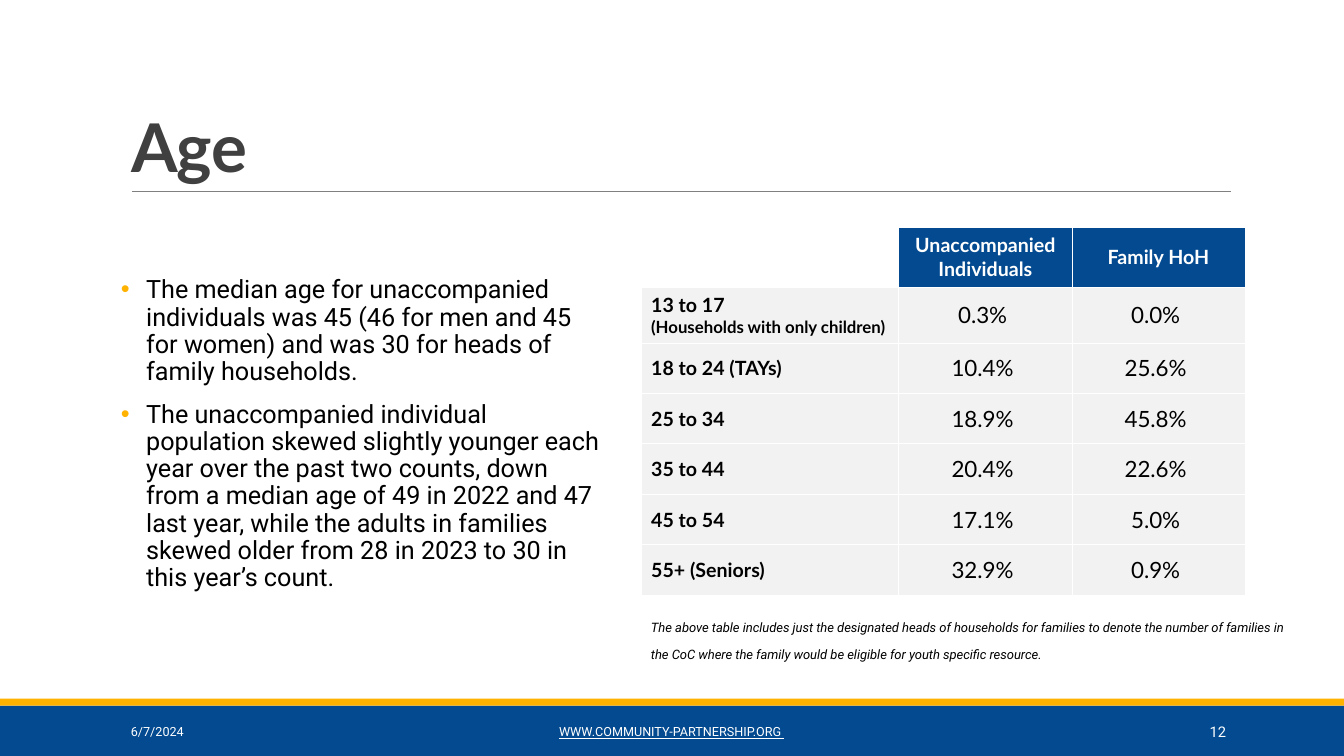
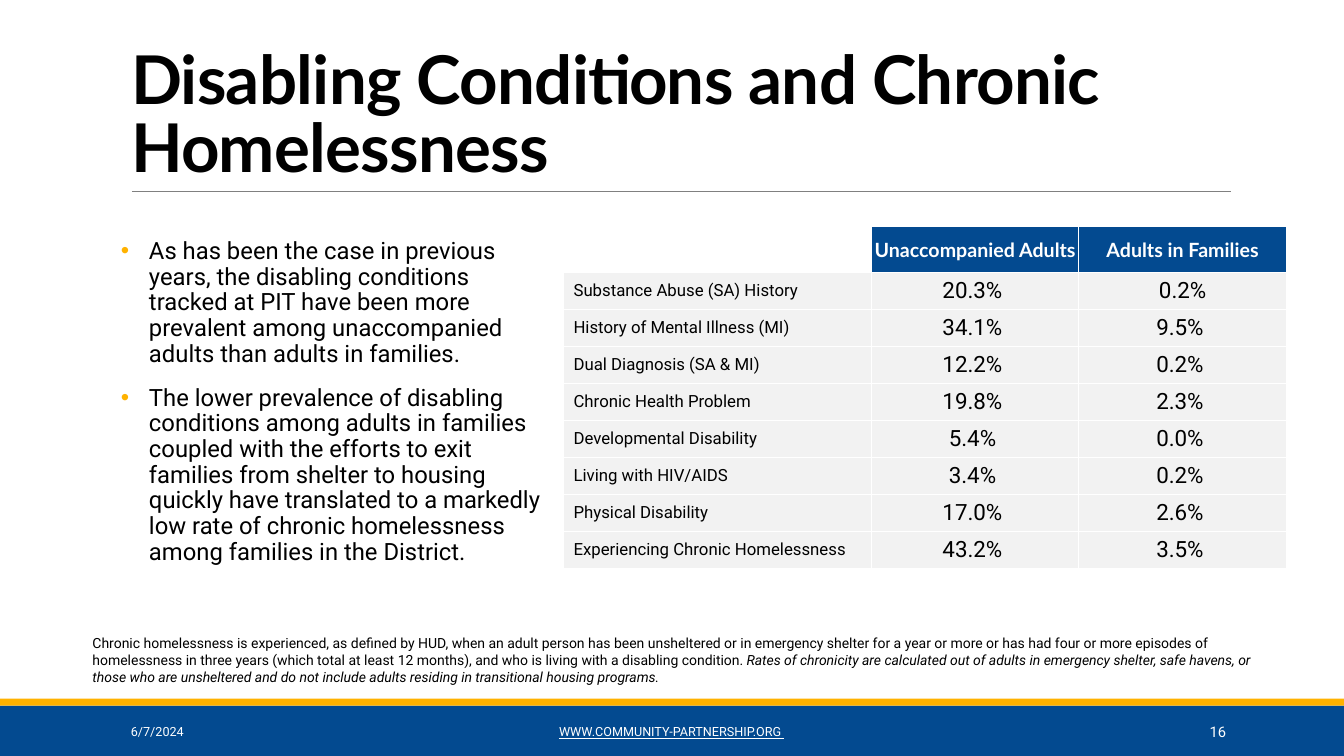
from lxml import etree
from pptx import Presentation
from pptx.dml.color import RGBColor
from pptx.enum.shapes import MSO_CONNECTOR, MSO_SHAPE
from pptx.enum.text import MSO_ANCHOR, MSO_AUTO_SIZE, PP_ALIGN
from pptx.oxml import parse_xml
from pptx.oxml.ns import qn
from pptx.util import Pt

RECTANGLE = MSO_SHAPE.RECTANGLE
STRAIGHT = MSO_CONNECTOR.STRAIGHT
TOP, MIDDLE, BOTTOM = MSO_ANCHOR.TOP, MSO_ANCHOR.MIDDLE, MSO_ANCHOR.BOTTOM
LEFT, CENTER, RIGHT = PP_ALIGN.LEFT, PP_ALIGN.CENTER, PP_ALIGN.RIGHT

BLUE = RGBColor(0x03, 0x4A, 0x90)
GOLD = RGBColor(0xFF, 0xB2, 0x00)
GRAY = RGBColor(0x80, 0x80, 0x80)
DARK_GRAY = RGBColor(0x40, 0x40, 0x40)
LIGHT_GRAY = RGBColor(0xF2, 0xF2, 0xF2)
BLACK = RGBColor(0, 0, 0)
WHITE = RGBColor(0xFF, 0xFF, 0xFF)

HEADING_FONT, BODY_FONT = "Lato", "Roboto"
SLIDE_WIDTH, SLIDE_HEIGHT = 960, 540
TITLE_ONLY = 5
NAMESPACE = "http://schemas.openxmlformats.org/drawingml/2006/main"


def add_run(paragraph, text, size, font=BODY_FONT, color=BLACK,
            bold=False, italic=False, underline=False):
    run = paragraph.add_run()
    run.text = text
    run.font.size = Pt(size)
    run.font.name = font
    run.font.color.rgb = color
    run.font.bold = bold
    run.font.italic = italic
    run.font.underline = underline
    return run


def add_bullet(paragraph, indent):
    """Give the paragraph a gold bullet with a hanging indent."""
    properties = paragraph._p.get_or_add_pPr()
    properties.set("marL", str(Pt(indent)))
    properties.set("indent", str(-Pt(indent)))
    color = etree.SubElement(properties, qn("a:buClr"))
    etree.SubElement(color, qn("a:srgbClr"), val=str(GOLD))
    etree.SubElement(properties, qn("a:buFont"), typeface="Arial")
    etree.SubElement(properties, qn("a:buChar"), char="•")


def set_borders(cell, color=WHITE, width=0.75):
    properties = cell._tc.get_or_add_tcPr()
    for side in ("lnL", "lnR", "lnT", "lnB"):
        properties.append(parse_xml(
            f'<a:{side} xmlns:a="{NAMESPACE}" w="{Pt(width)}"><a:solidFill>'
            f'<a:srgbClr val="{color}"/></a:solidFill></a:{side}>'))


def set_margins(target, horizontal, vertical):
    target.margin_left = target.margin_right = Pt(horizontal)
    target.margin_top = target.margin_bottom = Pt(vertical)


class Deck:
    """Holds the shared style and the slide being filled."""

    def __init__(self):
        self.presentation = Presentation()
        self.presentation.slide_width = Pt(SLIDE_WIDTH)
        self.presentation.slide_height = Pt(SLIDE_HEIGHT)
        self.slide = None

    def add_slide(self, title, number, title_color):
        layout = self.presentation.slide_layouts[TITLE_ONLY]
        self.slide = self.presentation.slides.add_slide(layout)
        self.add_band(504, 36, BLUE)
        self.add_band(499, 5, GOLD)
        self.add_rule(94.3, 879, 136.8)
        self.set_title(title, title_color)
        self.add_footer(86.4, 194.4, LEFT, "6/7/2024")
        self.add_footer(290, 379.4, CENTER, "WWW.COMMUNITY-PARTNERSHIP.ORG ",
                        underline=True)
        self.add_footer(780, 102.8, RIGHT, str(number), size=10.5)

    def add_band(self, top, height, color):
        band = self.slide.shapes.add_shape(
            RECTANGLE, 0, Pt(top), Pt(SLIDE_WIDTH), Pt(height))
        band.shadow.inherit = False
        band.fill.solid()
        band.fill.fore_color.rgb = color
        band.line.fill.background()

    def add_rule(self, left, right, top):
        rule = self.slide.shapes.add_connector(
            STRAIGHT, Pt(left), Pt(top), Pt(right), Pt(top))
        rule.line.color.rgb = GRAY
        rule.line.width = Pt(0.5)
        etree.SubElement(rule._element.spPr, qn("a:effectLst"))

    def set_title(self, text, color):
        title = self.slide.shapes.title
        title.left, title.top = Pt(86.4), Pt(22.3)
        title.width, title.height = Pt(792), Pt(114.5)
        frame = title.text_frame
        frame.auto_size = MSO_AUTO_SIZE.NONE
        frame.word_wrap = True
        frame.vertical_anchor = BOTTOM
        paragraph = frame.paragraphs[0]
        paragraph.alignment = LEFT
        paragraph.line_spacing = 0.85
        run = add_run(paragraph, text, 48, HEADING_FONT, color, bold=True)
        run._r.get_or_add_rPr().set("spc", "-50")

    def add_text_frame(self, left, top, width, height, anchor=TOP):
        box = self.slide.shapes.add_textbox(
            Pt(left), Pt(top), Pt(width), Pt(height))
        box.text_frame.word_wrap = True
        box.text_frame.vertical_anchor = anchor
        return box.text_frame

    def add_footer(self, left, width, alignment, text, size=9, underline=False):
        frame = self.add_text_frame(left, 508.3, width, 28.8, MIDDLE)
        paragraph = frame.paragraphs[0]
        paragraph.alignment = alignment
        add_run(paragraph, text, size, color=WHITE, underline=underline)

    def add_bullets(self, left, top, width, height, texts, size, indent,
                    margins, space_after=0):
        frame = self.add_text_frame(left, top, width, height)
        set_margins(frame, *margins)
        for index, text in enumerate(texts):
            paragraph = frame.add_paragraph() if index else frame.paragraphs[0]
            add_bullet(paragraph, indent)
            paragraph.line_spacing = 0.9
            paragraph.space_before = Pt(11 if index else 0)
            paragraph.space_after = Pt(space_after)
            add_run(paragraph, text, size)

    def add_note(self, left, top, width, height, parts, size, superscript=False):
        """Write (text, italic) parts as one paragraph."""
        frame = self.add_text_frame(left, top, width, height)
        for text, italic in parts:
            run = add_run(frame.paragraphs[0], text, size, italic=italic)
            if superscript:
                run._r.get_or_add_rPr().set("baseline", "30000")

    def add_data_table(self, left, top, widths, heights, headers, rows,
                       font, label_size, bold_labels, value_margin):
        """Rows hold a label, which may have a smaller second line, and values."""
        table = self.slide.shapes.add_table(
            len(heights), len(widths), Pt(left), Pt(top),
            Pt(sum(widths)), Pt(sum(heights))).table
        table.first_row = table.horz_banding = False
        for column, width in zip(table.columns, widths):
            column.width = Pt(width)
        for row, height in zip(table.rows, heights):
            row.height = Pt(height)

        self.fill_cell(table.cell(0, 0), WHITE)
        for column, header in enumerate(headers, 1):
            cell = table.cell(0, column)
            self.fill_cell(cell, BLUE, (0, 0))
            paragraph = cell.text_frame.paragraphs[0]
            paragraph.alignment = CENTER
            add_run(paragraph, header, 14, HEADING_FONT, WHITE, bold=True)

        for row, (label, *values) in enumerate(rows, 1):
            cell = table.cell(row, 0)
            self.fill_cell(cell, LIGHT_GRAY)
            frame = cell.text_frame
            for index, line in enumerate(label.split("\n")):
                paragraph = frame.add_paragraph() if index else frame.paragraphs[0]
                add_run(paragraph, line, 12 if index else label_size, font,
                        bold=bold_labels)
            for column, value in enumerate(values, 1):
                cell = table.cell(row, column)
                self.fill_cell(cell, LIGHT_GRAY, (value_margin, 3.6))
                paragraph = cell.text_frame.paragraphs[0]
                paragraph.alignment = CENTER
                add_run(paragraph, value, 16, font)

    def fill_cell(self, cell, color, margins=(7.2, 3.6)):
        set_borders(cell)
        cell.fill.solid()
        cell.fill.fore_color.rgb = color
        cell.vertical_anchor = MIDDLE
        set_margins(cell, *margins)


def add_age_slide(deck):
    deck.add_slide("Age", 12, DARK_GRAY)
    deck.add_bullets(78.5, 193.7, 360.7, 249.8, [
        "The median age for unaccompanied individuals was 45 (46 for men and 45 "
        "for women) and was 30 for heads of family households.",
        "The unaccompanied individual population skewed slightly younger each "
        "year over the past two counts, down from a median age of 49 in 2022 "
        "and 47 last year, while the adults in families skewed older from 28 in "
        "2023 to 30 in this year’s count.",
    ], size=18, indent=18, margins=(7.9, 4.3))
    deck.add_data_table(
        457.9, 162.3, [184.2, 123.6, 123.6], [42.8, 40] + [36] * 5,
        ["Unaccompanied Individuals", "Family HoH"], [
            ("13 to 17\n(Households with only children)", "0.3% ", "0.0% "),
            ("18 to 24 (TAYs)", "10.4% ", "25.6% "),
            ("25 to 34", "18.9% ", "45.8% "),
            ("35 to 44", "20.4% ", "22.6% "),
            ("45 to 54", "17.1% ", "5.0% "),
            ("55+ (Seniors)", "32.9% ", "0.9% "),
        ], font=HEADING_FONT, label_size=14, bold_labels=True, value_margin=3.6)
    deck.add_note(457.9, 437, 480, 33, [(
        "The above table includes just the designated heads of households for "
        "families to denote the number of families in the CoC where the family "
        "would be eligible for youth specific resource.", True)],
        size=16, superscript=True)


def add_disability_slide(deck):
    deck.add_slide("Disabling Conditions and Chronic Homelessness", 16, BLACK)
    deck.add_bullets(86.4, 167, 306, 290, [
        "As has been the case in previous years, the disabling conditions "
        "tracked at PIT have been more prevalent among unaccompanied adults "
        "than adults in families.",
        "The lower prevalence of disabling conditions among adults in families "
        "coupled with the efforts to exit families from shelter to housing "
        "quickly have translated to a markedly low rate of chronic homelessness "
        "among families in the District.",
    ], size=17, indent=20, margins=(0, 3.6), space_after=2)
    deck.add_note(59, 450, 859.7, 43.9, [
        ("Chronic homelessness is experienced, as defined by HUD, when an adult "
         "person has been unsheltered or in emergency shelter for a year or more "
         "or has had four or more episodes of homelessness in three years (which "
         "total at least 12 months), and who is living with a disabling "
         "condition. ", False),
        ("Rates of chronicity are calculated out of adults in emergency shelter, "
         "safe havens, or those who are unsheltered and do not include adults "
         "residing in transitional housing programs.", True),
    ], size=10)
    deck.add_data_table(
        402.5, 162, [220, 148.2, 148.2], [32.4] + [26.4] * 8,
        ["Unaccompanied Adults", "Adults in Families"], [
            ("Substance Abuse (SA) History", "20.3% ", "0.2%"),
            ("History of Mental Illness (MI)", "34.1% ", "9.5% "),
            ("Dual Diagnosis (SA & MI)", "12.2% ", "0.2% "),
            ("Chronic Health Problem", "19.8% ", "2.3% "),
            ("Developmental Disability", "5.4% ", "0.0% "),
            ("Living with HIV/AIDS", "3.4% ", "0.2% "),
            ("Physical Disability", "17.0% ", "2.6% "),
            ("Experiencing Chronic Homelessness", "43.2% ", "3.5% "),
        ], font=BODY_FONT, label_size=12, bold_labels=False, value_margin=7.2)


def main():
    deck = Deck()
    add_age_slide(deck)
    add_disability_slide(deck)
    deck.presentation.save("out.pptx")


if __name__ == "__main__":
    main()
